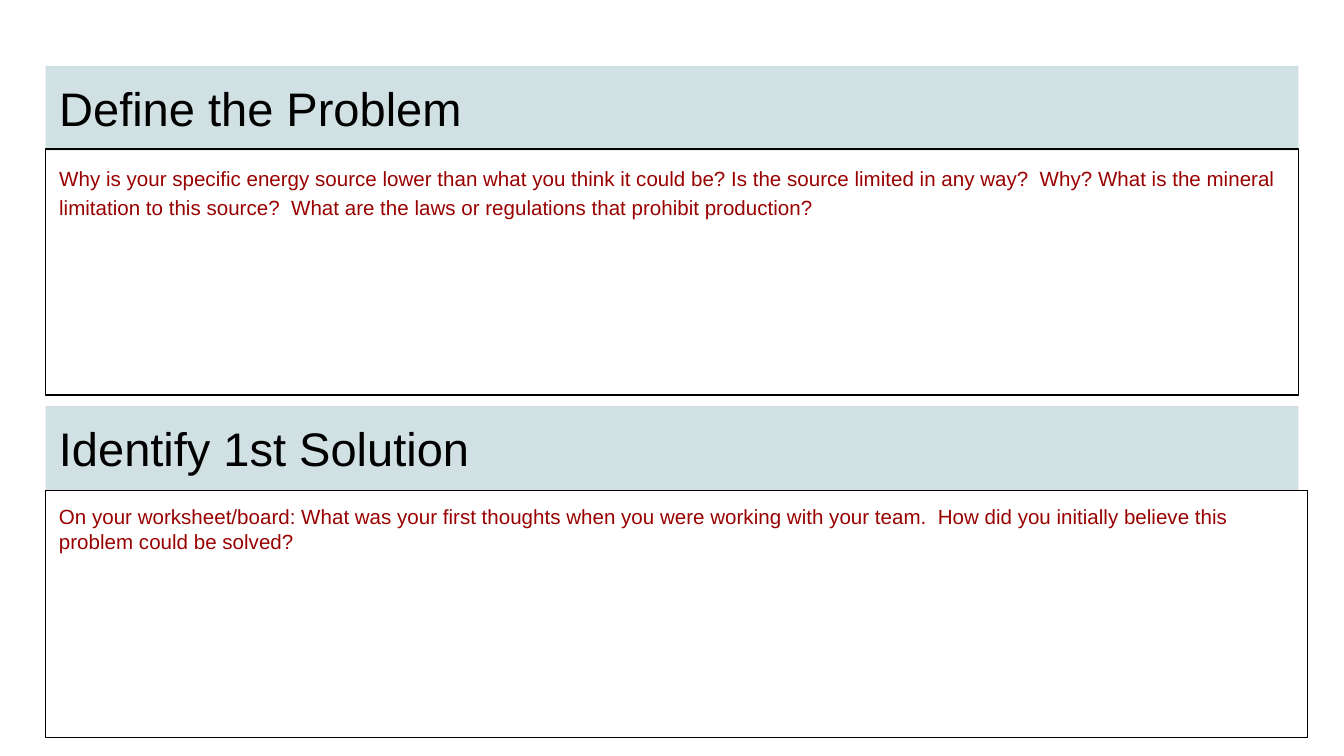
from pptx import Presentation
from pptx.dml.color import RGBColor
from pptx.enum.text import MSO_ANCHOR, MSO_AUTO_SIZE, PP_ALIGN
from pptx.oxml.ns import qn
from pptx.util import Inches, Pt

LEFT, TOP = PP_ALIGN.LEFT, MSO_ANCHOR.TOP
NO_FIT = MSO_AUTO_SIZE.NONE

SECTIONS = [
    {"head": "Define the Problem", "head_y": 0.49,
     "prompt": "Why is your specific energy source lower than what you think it could be? "
               "Is the source limited in any way?  Why? What is the mineral limitation to "
               "this source?  What are the laws or regulations that prohibit production?",
     "box_y": 1.11, "box_w": 9.32, "box_h": 1.83, "spacing": 1.15},
    {"head": "Identify 1st Solution", "head_y": 3.02,
     "prompt": "On your worksheet/board: What was your first thoughts when you were working "
               "with your team.  How did you initially believe this problem could be solved?",
     "box_y": 3.65, "box_w": 9.39, "box_h": 1.84, "spacing": 1.0},
]
X, HEAD_W, HEAD_H = 0.34, 9.32, 0.63


def color(value):
    return RGBColor.from_string(value)


def place(sp, y, w, h):
    sp.left, sp.top, sp.width, sp.height = (Inches(v) for v in (X, y, w, h))


def write(sp, text, size, font_color, spacing=1.0):
    tf = sp.text_frame
    tf.text = text
    tf.word_wrap = True
    tf.auto_size = NO_FIT
    tf.vertical_anchor = TOP
    tf.margin_left = tf.margin_right = tf.margin_top = tf.margin_bottom = Inches(0.1)
    p = tf.paragraphs[0]
    p.alignment = LEFT
    p.line_spacing = spacing
    p.space_before = Pt(0)
    p.font.name = "Arial"
    p.font.size = Pt(size)
    p.font.color.rgb = color(font_color)
    pPr = p._p.get_or_add_pPr()
    pPr.set("marL", "0")
    pPr.set("indent", "0")
    pPr.insert_element_before(pPr.makeelement(qn("a:buNone"), {}), "a:tabLst", "a:defRPr")


def add_section(head, box, section):
    place(head, section["head_y"], HEAD_W, HEAD_H)
    head.fill.solid()
    head.fill.fore_color.rgb = color("D0E0E3")
    write(head, section["head"], 25.2, "000000")

    place(box, section["box_y"], section["box_w"], section["box_h"])
    box.line.color.rgb = color("000000")
    box.line.width = Pt(0.75)
    write(box, section["prompt"], 11, "990000", section["spacing"])


prs = Presentation()
prs.slide_width = Inches(10)
prs.slide_height = prs.slide_width * 9 // 16
s = prs.slides.add_slide(prs.slide_layouts[1])
add_section(s.shapes.title, s.placeholders[1], SECTIONS[0])
head, box = (s.shapes.add_textbox(0, 0, 0, 0) for _ in range(2))
add_section(head, box, SECTIONS[1])
prs.save("out.pptx")
